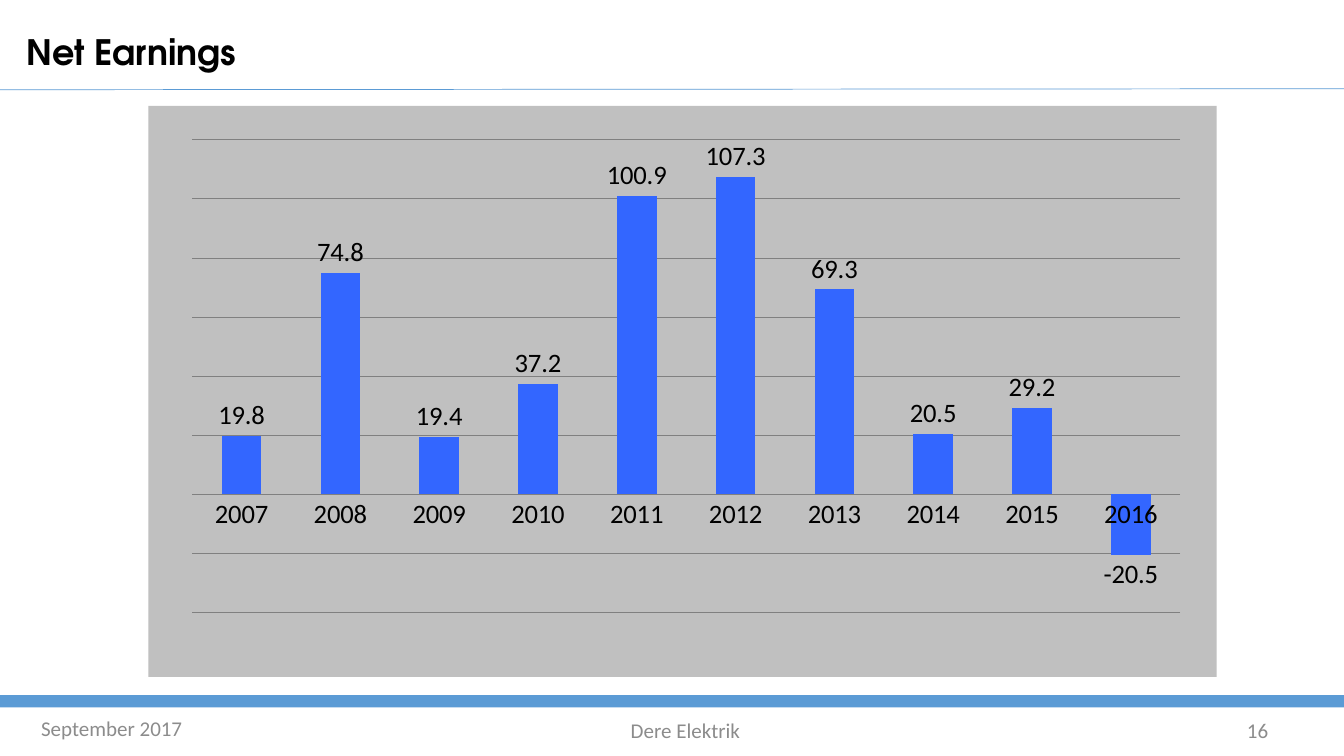
from lxml import etree
from pptx import Presentation
from pptx.chart import data as chart_data
from pptx.dml.color import RGBColor
from pptx.enum import chart as charts, shapes, text
from pptx.oxml import parse_xml
from pptx.oxml.ns import nsdecls, qn
from pptx.util import Pt

BLUE, BAR_BLUE, GREY, PANEL, GRID = "5B9BD5", "3366FF", "8C8C8C", "C0C0C0", "808080"
YEARS = [str(year) for year in range(2007, 2017)]
EARNINGS = [19.8, 74.8, 19.4, 37.2, 100.9, 107.3, 69.3, 20.5, 29.2, -20.5]


def colour(hex_value):
    return RGBColor.from_string(hex_value)


def set_all(target, values):
    for name, value in values.items():
        setattr(target, name, value)


def write(shape, words, font, align=text.PP_ALIGN.LEFT, hex_value="000000"):
    frame = shape.text_frame
    set_all(frame, {"word_wrap": True, "auto_size": text.MSO_AUTO_SIZE.NONE,
                    "vertical_anchor": text.MSO_ANCHOR.MIDDLE})
    paragraph = frame.paragraphs[0]
    paragraph.alignment = align
    run = paragraph.add_run()
    run.text = words
    set_all(run.font, font)
    run.font.color.rgb = colour(hex_value)
    return frame


def add_title(slide, words):
    title = slide.shapes.title
    set_all(title, {"left": Pt(0), "top": Pt(13.7), "width": Pt(926), "height": Pt(49.7)})
    frame = write(title, words, {"name": "TeX Gyre Adventor", "size": Pt(25), "bold": True})
    set_all(frame, {"margin_left": Pt(18.7), "margin_right": Pt(32.4),
                    "margin_top": Pt(3.6), "margin_bottom": Pt(3.6)})
    frame.paragraphs[0].line_spacing = 0.9


def add_rule(slide):
    rule = slide.shapes.add_connector(
        shapes.MSO_CONNECTOR.STRAIGHT, Pt(0), Pt(64.1), Pt(960), Pt(63.4))
    rule.line.color.rgb = colour(BLUE)
    rule.line.width = Pt(0.5)
    etree.SubElement(rule.element.spPr, qn("a:effectLst"))


def add_band(slide):
    band = slide.shapes.add_shape(
        shapes.MSO_SHAPE.RECTANGLE, Pt(0), Pt(496.6), Pt(960), Pt(8.8))
    band.shadow.inherit = False
    band.fill.solid()
    band.fill.fore_color.rgb = colour(BLUE)
    band.line.fill.background()


def add_footer(slide, words, left, top, width, align):
    footer = slide.shapes.add_textbox(Pt(left), Pt(top), Pt(width), Pt(28.8))
    write(footer, words, {"name": "Calibri", "size": Pt(15)}, align, GREY)


def panel_fill():
    return parse_xml(
        f'<c:spPr {nsdecls("c", "a")}><a:solidFill><a:srgbClr val="{PANEL}"/></a:solidFill>'
        '<a:ln><a:noFill/></a:ln></c:spPr>')


def place_plot(plot_area, **box):
    layout = plot_area.find(qn("c:layout"))
    if layout is None:
        layout = etree.Element(qn("c:layout"))
        plot_area.insert(0, layout)
    manual = etree.SubElement(layout, qn("c:manualLayout"))
    settings = {"layoutTarget": "inner", "xMode": "edge", "yMode": "edge", **box}
    for tag, value in settings.items():
        etree.SubElement(manual, qn(f"c:{tag}")).set("val", str(value))


def add_earnings_chart(slide):
    earnings = chart_data.CategoryChartData(number_format="0.0")
    earnings.categories = YEARS
    earnings.add_series("Net Earnings", EARNINGS)
    chart = slide.shapes.add_chart(
        charts.XL_CHART_TYPE.COLUMN_CLUSTERED,
        Pt(106), Pt(75.6), Pt(763), Pt(408), earnings).chart
    set_all(chart, {"has_legend": False, "has_title": False})
    set_all(chart.font, {"name": "Calibri", "size": Pt(19)})
    chart.font.color.rgb = colour("000000")

    # Bars and value labels
    plot = chart.plots[0]
    set_all(plot, {"gap_width": 150, "vary_by_categories": False, "has_data_labels": True})
    set_all(plot.data_labels, {
        "show_value": True, "number_format": "0.0", "number_format_is_linked": False,
        "position": charts.XL_LABEL_POSITION.OUTSIDE_END})
    bars = plot.series[0]
    bars.invert_if_negative = False
    bars.format.fill.solid()
    bars.format.fill.fore_color.rgb = colour(BAR_BLUE)

    # Axes and gridlines
    no_tick = charts.XL_TICK_MARK.NONE
    set_all(chart.category_axis, {"major_tick_mark": no_tick, "minor_tick_mark": no_tick})
    chart.category_axis.format.line.fill.background()
    values = chart.value_axis
    set_all(values, {"minimum_scale": -40, "maximum_scale": 120, "major_unit": 20,
                     "has_major_gridlines": True, "visible": False})
    grid_line = values.major_gridlines.format.line
    grid_line.color.rgb = colour(GRID)
    grid_line.width = Pt(0.25)

    # Grey panel and plot position
    chart_node = chart.element.find(qn("c:chart"))
    plot_area = chart_node.find(qn("c:plotArea"))
    place_plot(plot_area, x=0.041, y=0.059, w=0.925, h=0.828)
    plot_area.append(panel_fill())
    chart_node.addnext(panel_fill())


def main():
    deck = Presentation()
    set_all(deck, {"slide_width": Pt(960), "slide_height": Pt(540)})
    slide = deck.slides.add_slide(deck.slide_layouts[5])

    # Header and footer
    add_band(slide)
    add_rule(slide)
    add_footer(slide, "September 2017", 22.3, 505.4, 216, text.PP_ALIGN.LEFT)
    add_footer(slide, "Dere Elektrik", 327.6, 506.9, 324, text.PP_ALIGN.CENTER)
    add_footer(slide, "16", 697, 506.9, 216, text.PP_ALIGN.RIGHT)
    add_title(slide, "Net Earnings")

    # Content
    add_earnings_chart(slide)
    deck.save("out.pptx")


if __name__ == "__main__":
    main()
